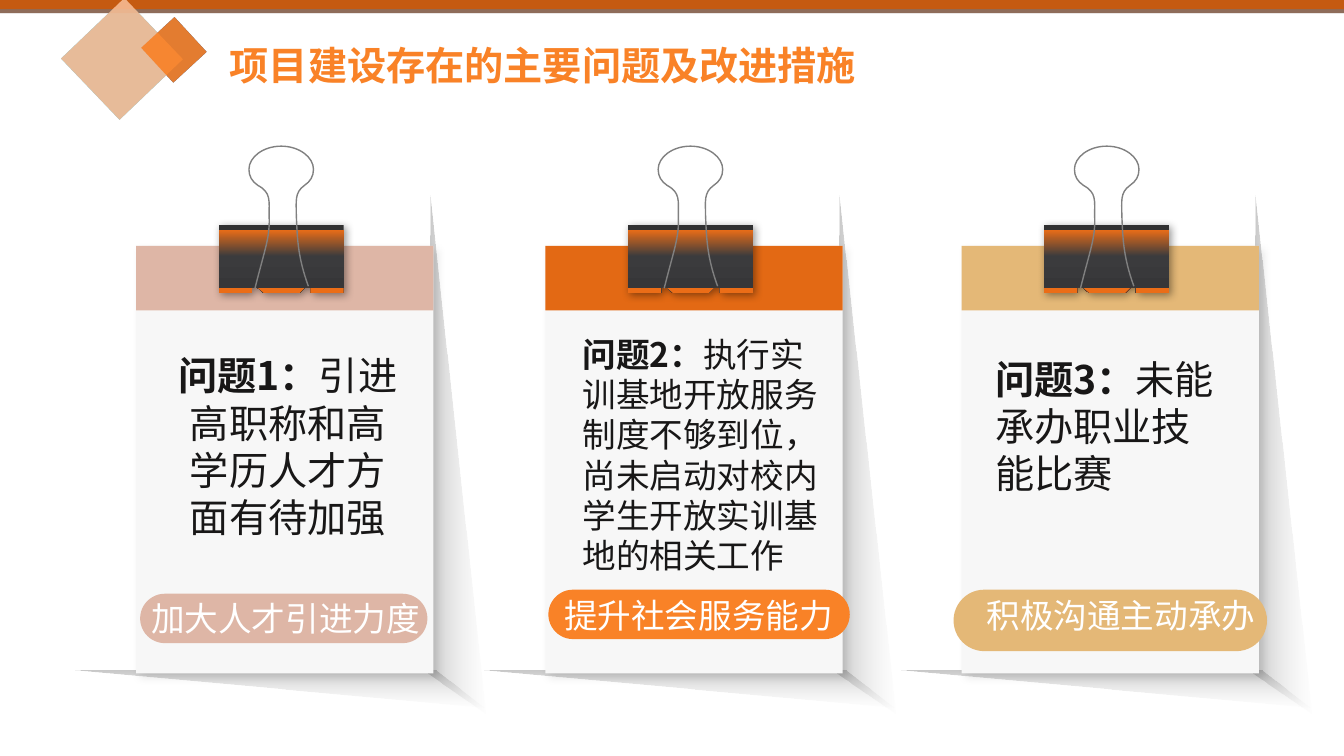
from dataclasses import dataclass
from typing import NamedTuple, Optional

from lxml.etree import Element, SubElement as Sub
from pptx import Presentation
from pptx.dml.color import RGBColor as Rgb
from pptx.enum.shapes import MSO_AUTO_SHAPE_TYPE as Preset
from pptx.enum.text import MSO_ANCHOR as Anchor, PP_ALIGN as Align
from pptx.oxml import parse_xml
from pptx.oxml.ns import nsdecls, qn
from pptx.util import Emu, Inches, Pt

COLUMNS, ROWS = 400 / 3, 75
Point = tuple[float, float]


@dataclass(frozen=True)
class Theme:
    latin: str = "Arial"
    cjk: str = "Noto Sans CJK SC"
    orange: str = "F98227"
    rose: str = "DEB6A6"
    pumpkin: str = "E36914"
    sand: str = "E4B877"
    page: str = "F7F7F7"
    ink: str = "181717"
    white: str = "FFFFFF"
    wire: str = "808080"
    bar: str = "C55A11"
    large: float = 28
    small: float = 24


class Box(NamedTuple):
    left: float
    top: float
    width: float
    height: float


class Stop(NamedTuple):
    position: int
    color: str
    alpha: int = 100


class Block(NamedTuple):
    color: str
    box: Box
    alpha: int = 100
    rotation: float = 0


class Run(NamedTuple):
    text: str
    bold: bool = False


class Card(NamedTuple):
    left: float
    color: str
    label: str
    issue: str
    issue_box: Box
    issue_size: float
    issue_align: Align
    pill: Block
    remedy: str
    remedy_box: Box
    remedy_align: Align


THEME = Theme()
BIG_DIAMOND, SMALL_DIAMOND = Box(7.9, 1.5, 8.4, 8.7), Box(14.9, 2.7, 4.7, 4.5)
LOWER_BAR = Box(0, 0.4, COLUMNS, 0.9)
LAYOUT_BLOCKS = [
    Block("152E52", LOWER_BAR, 50),
    Block("4DC0DF", BIG_DIAMOND, 90, 46.3),
    Block("05347F", SMALL_DIAMOND, 90, 47.3),
]
HEADER = [
    Block("94430D", LOWER_BAR, 50),
    Block(THEME.bar, Box(0, 0, COLUMNS, 0.9)),
    Block("F6BA92", BIG_DIAMOND, 90, 46.3),
    Block(THEME.orange, SMALL_DIAMOND, 90, 47.3),
]
CARDS = [
    Card(13.5, THEME.rose, "问题1：", "引进高职称和高学历人才方面有待加强",
         Box(16, 34.4, 25.1, 19.9), THEME.large, Align.CENTER,
         Block(THEME.rose, Box(13.9, 58.9, 28.5, 4.9)),
         "加大人才引进力度", Box(14, 58.8, 32.2, 9.1), Align.LEFT),
    Card(54.1, THEME.pumpkin, "问题2：", "执行实训基地开放服务制度不够到位，尚未启动对校内学生开放实训基地的相关工作",
         Box(56.8, 32.6, 26.8, 25.2), THEME.small, Align.LEFT,
         Block(THEME.orange, Box(54.4, 58.5, 29.9, 4.9)),
         "提升社会服务能力", Box(54.2, 58.5, 30.2, 9.1), Align.CENTER),
    Card(95.4, THEME.sand, "问题3：", "未能承办职业技能比赛",
         Box(97.75, 34.75, 24.7, 15.1), THEME.large, Align.LEFT,
         Block(THEME.sand, Box(94.6, 58.5, 31.1, 6.1)),
         "积极沟通主动承办", Box(89.7, 58.5, 43, 5), Align.CENTER),
]
SIDE_SHADE = [(29, 66.8), (34.7, 70.8), (29.2, 19.4)]
FOOT_SHADE = [(29.8, 66.5), (34.6, 70.2), (-6, 66.5)]
SHADE_STOPS = [Stop(0, "F3F3F3", 12), Stop(100, "808080", 44)]
CLIP = [(8.2, 22.3), (20.6, 22.3), (20.6, 29.1), (17.3, 29.1), (17.3, 28.5), (16.8, 28.5),
        (16.2, 29.1), (12.7, 29.1), (12, 28.5), (11.5, 28.5), (11.5, 29.1), (8.2, 29.1)]
CLIP_STOPS = [Stop(7, "313132"), Stop(7, "EB6D17"), Stop(46, "3B3B3D"),
              Stop(93, "363638"), Stop(93, "EB6D17")]
WIRE_START = (11.8, 28.6)
WIRE_CURVES = [
    ((12.8, 24.6), (13.3, 23.6), (13.2, 21.4)), ((13.2, 19.9), (13.4, 19.1), (12.1, 18.4)),
    ((11.5, 18), (11.2, 17.5), (11.2, 16.8)), ((11.2, 15.6), (12.6, 14.5), (14.4, 14.5)),
    ((16.2, 14.5), (17.6, 15.6), (17.6, 16.8)), ((17.6, 17.5), (17.3, 18), (16.7, 18.4)),
    ((15.7, 19.1), (15.9, 20), (15.9, 21.4)), ((16, 23.5), (16, 25.4), (17.1, 28.4)),
]

presentation = Presentation()
presentation.slide_width, presentation.slide_height = Inches(40 / 3), Inches(7.5)
slide = presentation.slides.add_slide(presentation.slide_layouts[5])


def x(columns: float) -> Emu:
    return Emu(round(presentation.slide_width * columns / COLUMNS))


def y(rows: float) -> Emu:
    return Emu(round(presentation.slide_height * rows / ROWS))


def place(box: Box) -> tuple[Emu, Emu, Emu, Emu]:
    return x(box.left), y(box.top), x(box.width), y(box.height)


def add_block(block: Block, preset: Preset = Preset.RECTANGLE):
    shape = slide.shapes.add_shape(preset, *place(block.box))
    shape.shadow.inherit = False
    shape.rotation = block.rotation
    shape.fill.solid()
    shape.fill.fore_color.rgb = Rgb.from_string(block.color)
    shape.line.fill.background()
    if block.alpha < 100:
        color = shape.element.spPr.find(qn("a:solidFill"))[0]
        Sub(color, qn("a:alpha"), val=str(block.alpha * 1000))
    return shape


def add_outline(left: float, points: list[Point], close: bool = True):
    corners = [(x(left + column), y(row)) for column, row in points]
    builder = slide.shapes.build_freeform(*corners[0])
    builder.add_line_segments(corners[1:], close=close)
    shape = builder.convert_to_shape()
    shape.shadow.inherit = False
    shape.line.fill.background()
    return shape


def add_wire(left: float) -> None:
    wire = add_outline(left, [WIRE_START] + [curve[-1] for curve in WIRE_CURVES], close=False)
    segments = list(wire.element.spPr.iter(qn("a:lnTo")))
    for segment, curve in zip(segments, WIRE_CURVES):
        bend = Element(qn("a:cubicBezTo"))
        for column, row in curve:
            Sub(bend, qn("a:pt"), x=str(x(left + column) - wire.left), y=str(y(row) - wire.top))
        segment.getparent().replace(segment, bend)
    wire.fill.background()
    wire.line.color.rgb = Rgb.from_string(THEME.wire)
    wire.line.width = Pt(1)


def fill_gradient(shape, stops: list[Stop], angle: int) -> None:
    shape.fill.solid()
    marks = "".join(
        f'<a:gs pos="{stop.position * 1000}"><a:srgbClr val="{stop.color}">'
        f'<a:alpha val="{stop.alpha * 1000}"/></a:srgbClr></a:gs>' for stop in stops)
    gradient = parse_xml(
        f'<a:gradFill {nsdecls("a")} rotWithShape="1"><a:gsLst>{marks}</a:gsLst>'
        f'<a:lin ang="{angle * 60000}" scaled="0"/></a:gradFill>')
    properties = shape.element.spPr
    properties.replace(properties.find(qn("a:solidFill")), gradient)


def cast_shadow(shape, alpha: int, blur: float, distance: float) -> None:
    effects = shape.element.spPr.find(qn("a:effectLst"))
    shadow = Sub(effects, qn("a:outerShdw"), blurRad=str(Pt(blur)), dist=str(Pt(distance)),
                 dir=str(45 * 60000), algn="tl", rotWithShape="0")
    Sub(Sub(shadow, qn("a:srgbClr"), val="000000"), qn("a:alpha"), val=str(alpha * 1000))


def write(shape, runs: list[Run], size: float, color: str, font: str, align: Align,
          spacing: Optional[float] = None) -> None:
    frame = shape.text_frame
    paragraph = frame.paragraphs[0]
    for target, values in (
        (frame, {"word_wrap": True, "vertical_anchor": Anchor.TOP}),
        (paragraph, {"alignment": align, "line_spacing": spacing}),
    ):
        for name, value in values.items():
            setattr(target, name, value)
    for item in runs:
        run = paragraph.add_run()
        run.text = item.text
        for name, value in {"size": Pt(size), "bold": item.bold, "name": font}.items():
            setattr(run.font, name, value)
        run.font.color.rgb = Rgb.from_string(color)
        Sub(run.font._element, qn("a:ea"), typeface=THEME.cjk)


def add_text(box: Box, runs: list[Run], size: float, color: str, align: Align) -> None:
    write(slide.shapes.add_textbox(*place(box)), runs, size, color, THEME.cjk, align)


def add_card(card: Card) -> None:
    for points, angle in ((SIDE_SHADE, 180), (FOOT_SHADE, 270)):
        fill_gradient(add_outline(card.left, points), SHADE_STOPS, angle)
    cast_shadow(add_block(Block(THEME.page, Box(card.left, 24.4, 29.5, 42.4))), 10, 6, 4)
    add_block(Block(card.color, Box(card.left, 24.4, 29.5, 6.4)))
    clip = add_outline(card.left, CLIP)
    fill_gradient(clip, CLIP_STOPS, 90)
    cast_shadow(clip, 40, 6, 2)
    add_wire(card.left)
    add_text(card.issue_box, [Run(card.label, True), Run(card.issue)],
             card.issue_size, THEME.ink, card.issue_align)
    add_block(card.pill, Preset.ROUNDED_RECTANGLE).adjustments[0] = 0.5
    add_text(card.remedy_box, [Run(card.remedy)], THEME.small, THEME.white, card.remedy_align)


def main() -> None:
    layout_tree = slide.slide_layout.shapes.element
    for block in LAYOUT_BLOCKS:
        layout_tree.append(add_block(block).element)
    for card in CARDS:
        add_card(card)
    title = slide.shapes.title
    title.left, title.top, title.width, title.height = place(Box(21.8, 2.9, 102.7, 6.4))
    write(title, [Run("项目建设存在的主要问题及改进措施", True)], THEME.large, THEME.orange,
          THEME.latin, Align.LEFT, 1.14)
    for block in HEADER:
        add_block(block)
    presentation.save("out.pptx")


if __name__ == "__main__":
    main()
